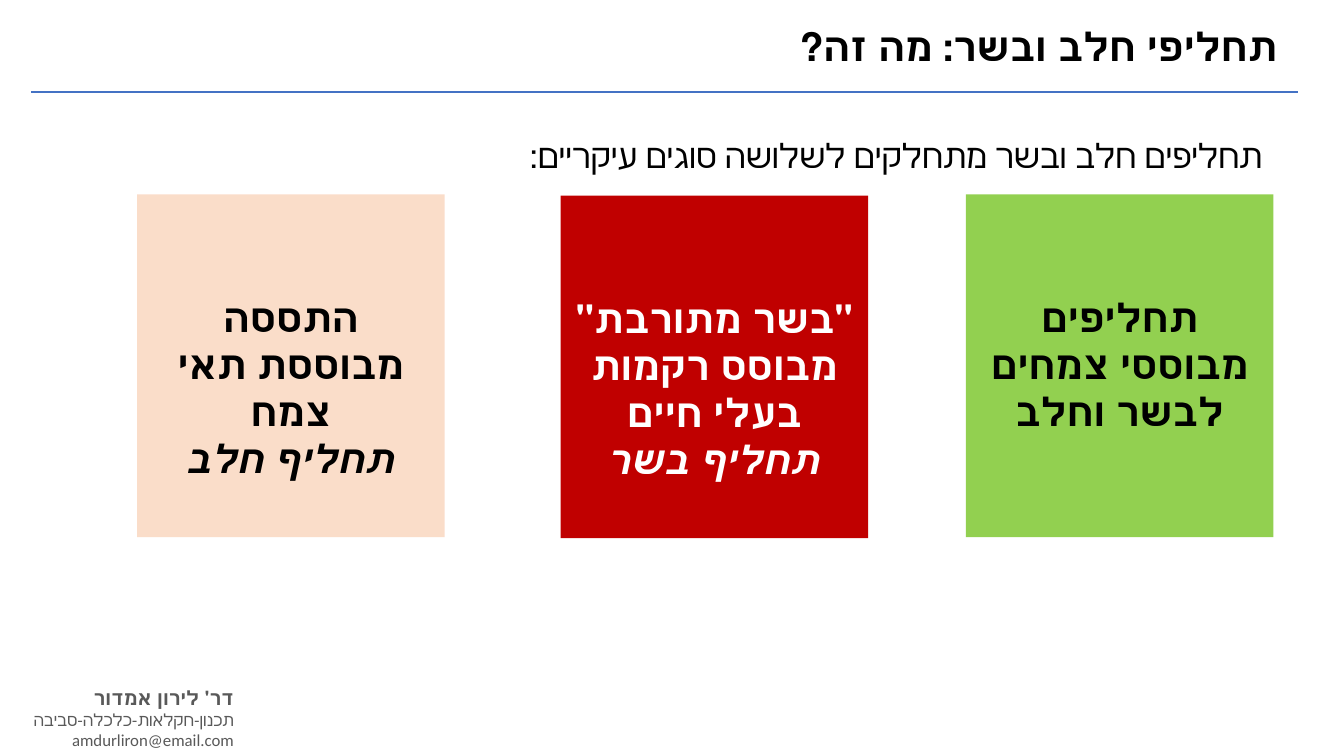
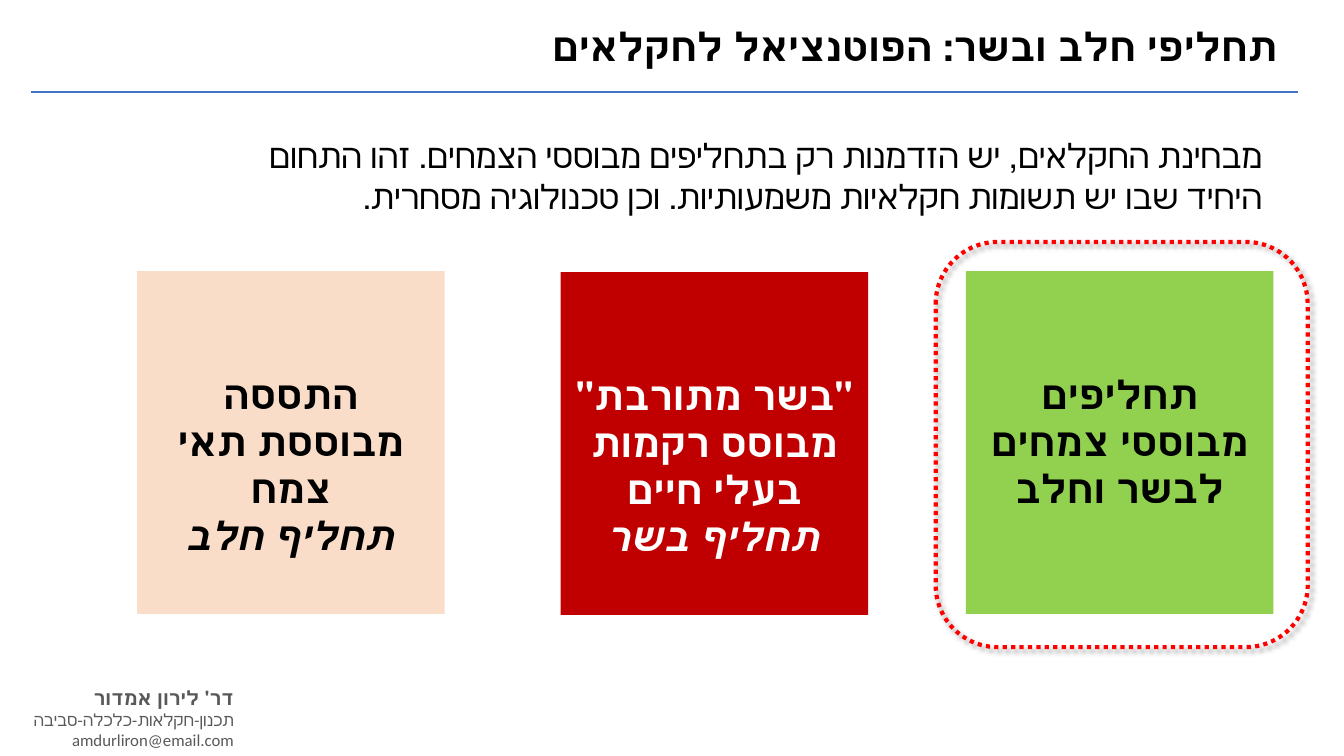
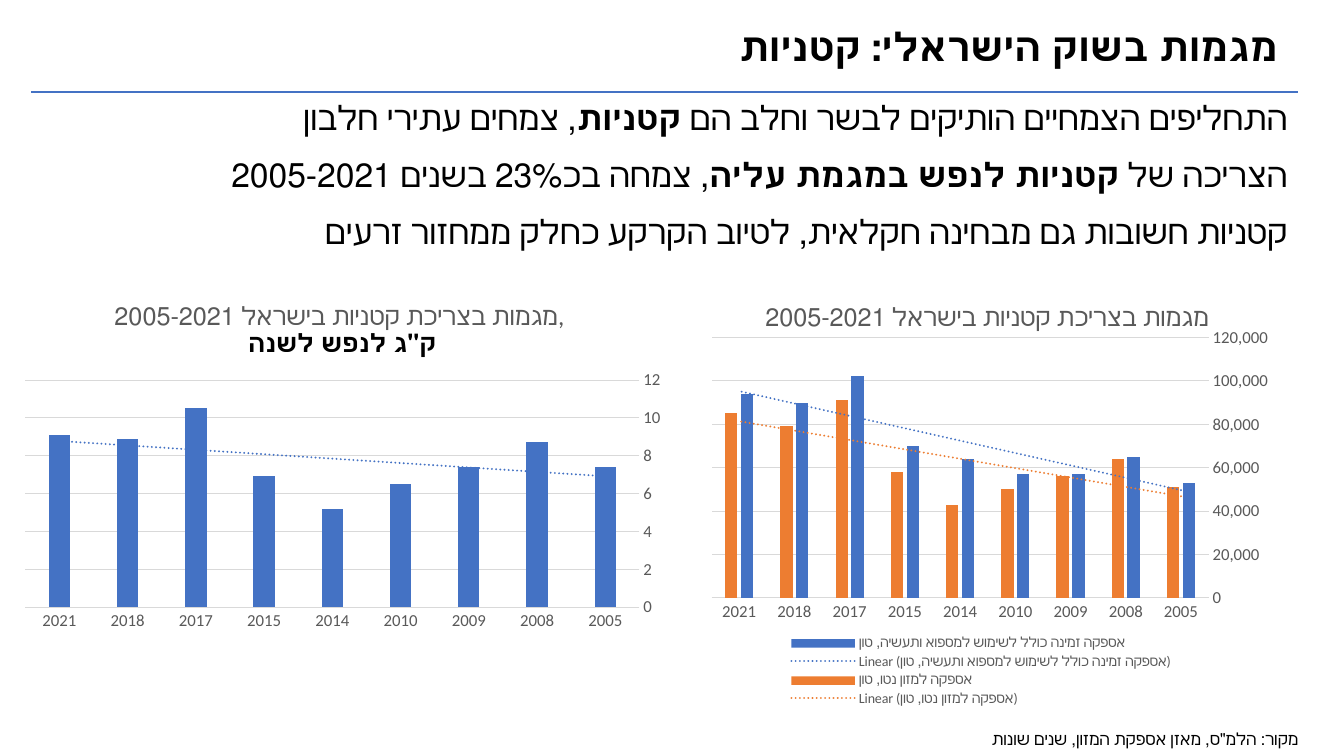
from lxml import etree
from pptx import Presentation
from pptx.chart.data import CategoryChartData as ChartData
from pptx.dml.color import RGBColor as RGB
from pptx.enum.chart import XL_CHART_TYPE as Kind
from pptx.enum.chart import XL_LEGEND_POSITION as Side
from pptx.enum.chart import XL_TICK_MARK as Tick
from pptx.enum.dml import MSO_LINE as Dash
from pptx.enum.shapes import MSO_CONNECTOR as Link
from pptx.enum.shapes import MSO_SHAPE as Geo
from pptx.enum.text import MSO_ANCHOR as Anchor
from pptx.enum.text import MSO_AUTO_SIZE as Fit
from pptx.enum.text import PP_ALIGN as Align
from pptx.oxml import parse_xml
from pptx.oxml.ns import nsdecls, qn
from pptx.util import Inches, Pt

HUE = {
    "black": "000000", "white": "FFFFFF", "gray": "595959", "grid": "D9D9D9",
    "blue": "4472C4", "orange": "ED7D31", "green": "92D050",
    "red": "C00000", "peach": "F8CBAD", "ring": "FF0000",
}

# Content: a paragraph is a list of (text, style) runs, style "b" or "i"
CARD = [
    [("דר' לירון אמדור", "b")],
    [("תכנון-חקלאות-כלכלה-סביבה", "")],
    [("amdurliron@email.com", "")],
]
BOXES = [  # left, drop, fill, opacity, text colour, paragraphs
    (9.58, 0, "green", 100, "black",
     [[("תחליפים מבוססי צמחים", "b")], [("לבשר וחלב", "b")]]),
    (5.56, 0.01, "red", 100, "white",
     [[('"בשר מתורבת" מבוסס רקמות בעלי חיים', "b")], [("תחליף בשר", "bi")]]),
    (1.36, 0, "peach", 65, "black",
     [[("התססה", "b")], [("מבוססת תאי צמח", "b")], [("תחליף חלב", "bi")]]),
]
KINDS = [  # title, body text, body height, top of boxes, ring
    ("תחליפי חלב ובשר: מה זה?",
     "תחליפים חלב ובשר מתחלקים לשלושה סוגים עיקריים:", 0.5, 1.93, None),
    ("תחליפי חלב ובשר: הפוטנציאל לחקלאים",
     "מבחינת החקלאים, יש הזדמנות רק בתחליפים מבוססי הצמחים. זהו התחום היחיד "
     "שבו יש תשומות חקלאיות משמעותיות. וכן טכנולוגיה מסחרית.",
     0.91, 2.69, (9.28, 2.4, 3.69, 4.02)),
]
TREND = "מגמות בשוק הישראלי: קטניות"
POINTS = [
    [("התחליפים הצמחיים הותיקים לבשר וחלב הם ", ""), ("קטניות", "b"),
     (", צמחים עתירי חלבון", "")],
    [("הצריכה של ", ""), ("קטניות לנפש במגמת עליה", "b"),
     (", צמחה בכ23% בשנים 2005-2021", "")],
    [("קטניות חשובות גם מבחינה חקלאית, לטיוב הקרקע כחלק ממחזור זרעים", "")],
]
SOURCE = 'מקור: הלמ"ס, מאזן אספקת המזון, שנים שונות'
YEARS = ["2005", "2008", "2009", "2010", "2014", "2015", "2017", "2018", "2021"]
CHARTS = [
    {"at": (0.12, 2.82, 6.55, 3.52), "plot": (0.02, 0.27, 0.93, 0.64),
     "title": 'מגמות בצריכת קטניות בישראל 2005-2021, \nק"ג לנפש לשנה',
     "top": 12, "step": 2, "format": "General", "legend": None,
     "series": [("Series 1", "blue",
                 [7.4, 8.7, 7.4, 6.5, 5.2, 6.9, 10.5, 8.9, 9.1])]},
    {"at": (6.82, 2.83, 5.94, 4.31), "plot": (0.04, 0.12, 0.83, 0.6),
     "title": "מגמות בצריכת קטניות בישראל 2005-2021",
     "top": 120000, "step": 20000, "format": "#,##0",
     "legend": (0.16, 0.8, 0.66, 0.18),
     "series": [
         ("אספקה זמינה כולל לשימוש למספוא ותעשיה, טון", "blue",
          [53000, 65000, 57000, 57000, 64000, 70000, 102000, 90000, 94000]),
         ("אספקה למזון נטו, טון", "orange",
          [51000, 64000, 56000, 50000, 43000, 58000, 91000, 79000, 85000])]},
]


def rgb(name):
    return RGB.from_string(HUE[name])


def place(shape, at):
    shape.left, shape.top, shape.width, shape.height = map(Inches, at)


def style(font, size, color="black", face="Calibri"):
    font.size, font.name = Pt(size), face
    font.color.rgb = rgb(color)


def write(frame, paras, sizes, color="black", face="Calibri",
          align=Align.RIGHT, after=0, anchor=Anchor.TOP):
    """Fill a frame with right-to-left paragraphs; sizes go by paragraph."""
    frame.word_wrap, frame.auto_size = True, Fit.NONE
    frame.vertical_anchor = anchor
    for n, runs in enumerate(paras):
        para = frame.add_paragraph() if n else frame.paragraphs[0]
        para.alignment = align
        para.space_before, para.space_after = Pt(0), Pt(after)
        props = para._p.get_or_add_pPr()
        for key, val in (("rtl", "1"), ("marL", "0"), ("indent", "0")):
            props.set(key, val)
        etree.SubElement(props, qn("a:buNone"))
        for text, flags in runs:
            run = para.add_run()
            run.text = text
            style(run.font, sizes[min(n, len(sizes) - 1)], color, face)
            run.font.bold, run.font.italic = "b" in flags, "i" in flags


def label(slide, at, paras, sizes, color="black"):
    box = slide.shapes.add_textbox(*map(Inches, at))
    write(box.text_frame, paras, sizes, color)


def start(deck, title, body, at, face="Calibri"):
    """New slide with the shared title, rule and body."""
    slide = deck.slides.add_slide(deck.slide_layouts[1])
    head, main = slide.placeholders
    place(head, (0.66, 0.17, 12.11, 0.57))
    write(head.text_frame, [[(title, "b")]], [28], anchor=Anchor.MIDDLE)
    place(main, at)
    write(main.text_frame, body, [24], face=face, after=12)
    rule = slide.shapes.add_connector(
        Link.STRAIGHT, *map(Inches, (0.31, 0.91, 12.87, 0.91)))
    rule.line.color.rgb, rule.line.width = rgb("blue"), Pt(1.5)
    etree.SubElement(rule._element.spPr, qn("a:effectLst"))
    return slide


def add_box(slide, top, left, drop, fill, alpha, color, paras):
    box = slide.shapes.add_shape(
        Geo.RECTANGLE, *map(Inches, (left, top + drop, 3.05, 3.4)))
    box.shadow.inherit = False
    box.fill.solid()
    box.fill.fore_color.rgb = rgb(fill)
    box.line.fill.background()
    if alpha < 100:
        tone = box._element.spPr.find(".//" + qn("a:srgbClr"))
        etree.SubElement(tone, qn("a:alpha")).set("val", str(alpha * 1000))
    write(box.text_frame, paras, [28], color, align=Align.CENTER)
    box.text_frame.margin_top = Inches(0.98)


def add_ring(slide, at):
    ring = slide.shapes.add_shape(Geo.ROUNDED_RECTANGLE, *map(Inches, at))
    ring.fill.background()
    ring.line.color.rgb, ring.line.width = rgb("ring"), Pt(3)
    ring.line.dash_style = Dash.ROUND_DOT
    ring.shadow.inherit = False
    ring._element.spPr.find(qn("a:effectLst")).append(parse_xml(
        f'<a:outerShdw {nsdecls("a")} blurRad="{Pt(4)}" dist="{Pt(3)}" '
        f'dir="2700000"><a:srgbClr val="{HUE["black"]}">'
        '<a:alpha val="40000"/></a:srgbClr></a:outerShdw>'))


def layout(spots, inner=False):
    target = '<c:layoutTarget val="inner"/>' if inner else ""
    modes = '<c:xMode val="edge"/><c:yMode val="edge"/>'
    sides = "".join(f'<c:{k} val="{v}"/>' for k, v in zip("xywh", spots))
    return parse_xml(f'<c:layout {nsdecls("c")}><c:manualLayout>{target}'
                     f'{modes}{sides}</c:manualLayout></c:layout>')


def trend(color):
    return parse_xml(
        f'<c:trendline {nsdecls("c", "a")}><c:spPr><a:ln w="{Pt(1.5)}" '
        f'cap="rnd"><a:solidFill><a:srgbClr val="{HUE[color]}"/></a:solidFill>'
        '<a:prstDash val="sysDot"/></a:ln></c:spPr>'
        '<c:trendlineType val="linear"/><c:dispRSqr val="0"/>'
        '<c:dispEq val="0"/></c:trendline>')


def add_bars(slide, info):
    data = ChartData(number_format=info["format"])
    data.categories = YEARS
    for name, _, vals in info["series"]:
        data.add_series(name, vals)
    chart = slide.shapes.add_chart(
        Kind.COLUMN_CLUSTERED, *map(Inches, info["at"]), data).chart
    style(chart.font, 10)

    # Title: first line gray, second line bold
    chart.has_title = True
    frame = chart.chart_title.text_frame
    frame.text = info["title"]
    for n, para in enumerate(frame.paragraphs):
        style(para.runs[0].font, 18, "black" if n else "gray")
        para.runs[0].font.bold = bool(n)

    # Axes
    cat, val = chart.category_axis, chart.value_axis
    for axis in (cat, val):
        style(axis.tick_labels.font, 12, "gray")
        axis.major_tick_mark = axis.minor_tick_mark = Tick.NONE
    cat.reverse_order = True
    val.minimum_scale, val.maximum_scale = 0, info["top"]
    val.major_unit = info["step"]
    val.tick_labels.number_format = info["format"]
    val.tick_labels.number_format_is_linked = False
    val.format.line.fill.background()
    for line in (cat.format.line, val.major_gridlines.format.line):
        line.color.rgb, line.width = rgb("grid"), Pt(0.75)

    # Columns and trend lines
    plot = chart.plots[0]
    plot.gap_width, plot.overlap, plot.vary_by_categories = 219, -27, False
    for bars, (_, color, _) in zip(plot.series, info["series"]):
        bars.format.fill.solid()
        bars.format.fill.fore_color.rgb = rgb(color)
        bars._element.find(qn("c:cat")).addprevious(trend(color))
    area = chart._chartSpace.find(".//" + qn("c:plotArea"))
    for old in area.findall(qn("c:layout")):
        area.remove(old)
    area.insert(0, layout(info["plot"], inner=True))

    # Legend
    chart.has_legend = bool(info["legend"])
    if info["legend"]:
        key = chart.legend
        key.position, key.include_in_layout = Side.LEFT, False
        style(key.font, 10, "gray")
        for old in key._element.findall(qn("c:layout")):
            key._element.remove(old)
        key._element.find(qn("c:legendPos")).addnext(layout(info["legend"]))


def main():
    deck = Presentation()
    deck.slide_width, deck.slide_height = Inches(13.33), Inches(7.5)

    # Kinds of substitutes
    for title, body, high, top, ring in KINDS:
        slide = start(deck, title, [[(body, "")]], (1.76, 1.29, 10.86, high))
        label(slide, (0.13, 6.76, 2.29, 0.74), CARD, [14, 12], "gray")
        for box in BOXES:
            add_box(slide, top, *box)
        if ring:
            add_ring(slide, ring)

    # Market trends
    slide = start(deck, TREND, POINTS, (0.31, 0.91, 12.56, 1.65), "Arial")
    for info in CHARTS:
        add_bars(slide, info)
    label(slide, (9.26, 7.18, 3.72, 0.3), [[(SOURCE, "")]], [12])
    deck.save("out.pptx")


if __name__ == "__main__":
    main()
